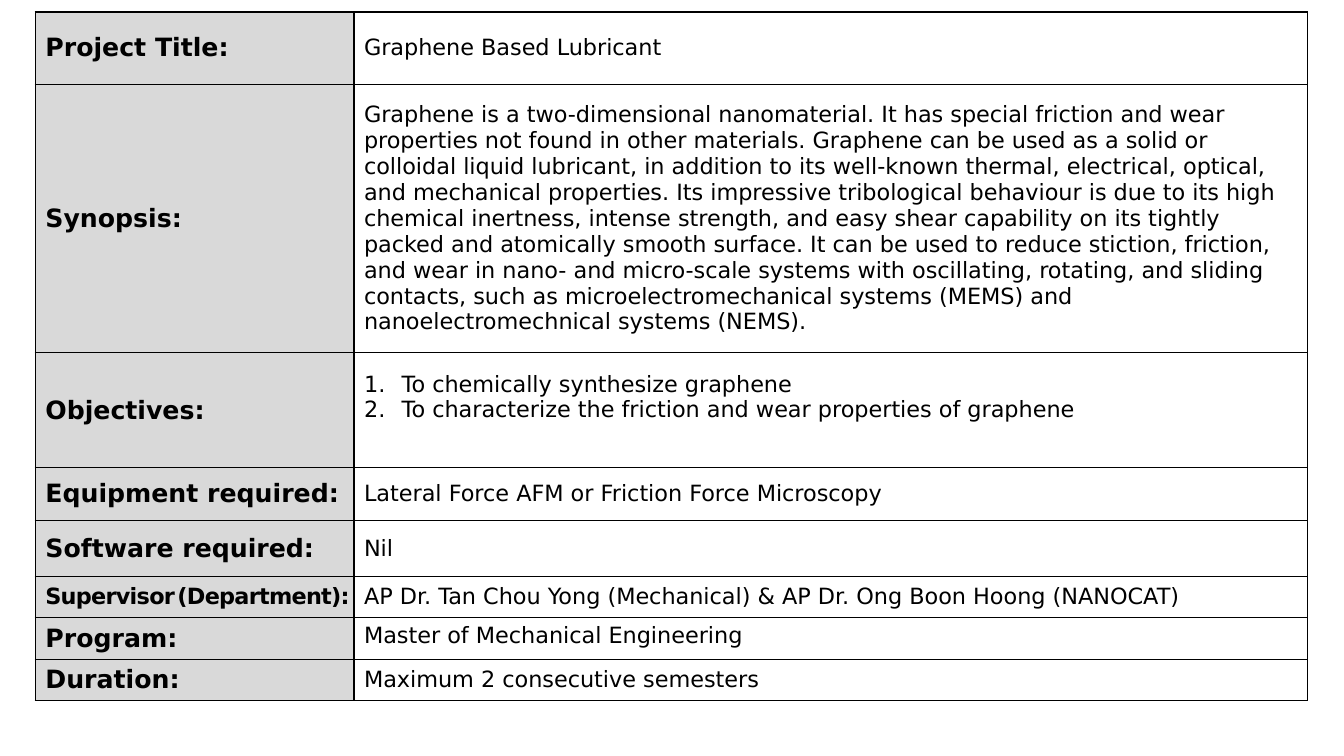
from dataclasses import dataclass

from lxml.etree import SubElement
from pptx import Presentation
from pptx.dml.color import RGBColor
from pptx.enum.text import MSO_ANCHOR as Anchor
from pptx.oxml.ns import qn
from pptx.util import Cm, Pt


@dataclass(frozen=True)
class Theme:
    font: str = "DejaVu Sans"
    ink: str = "000000"
    label_fill: str = "D9D9D9"
    label_size: int = 18
    body_size: int = 16
    gap_size: int = 5
    border: int = 1


THEME = Theme()
COLUMN_WIDTHS = (8.03, 24.03)
SYNOPSIS = (
    "Graphene is a two-dimensional nanomaterial. It has special friction and wear "
    "properties not found in other materials. Graphene can be used as a solid or "
    "colloidal liquid lubricant, in addition to its well-known thermal, electrical, "
    "optical, and mechanical properties. Its impressive tribological behaviour is due "
    "to its high chemical inertness, intense strength, and easy shear capability on "
    "its tightly packed and atomically smooth surface. It can be used to reduce "
    "stiction, friction, and wear in nano- and micro-scale systems with oscillating, "
    "rotating, and sliding contacts, such as microelectromechanical systems (MEMS) "
    "and nanoelectromechnical systems (NEMS)."
)
# Row height in cm, label, details
ROWS = (
    (1.83, "Project Title:", ["Graphene Based Lubricant"]),
    (6.76, "Synopsis:", [SYNOPSIS]),
    (2.9, "Objectives:", [
        "To chemically synthesize graphene",
        "To characterize the friction and wear properties of graphene",
    ]),
    (1.32, "Equipment required:", ["Lateral Force AFM or Friction Force Microscopy"]),
    (1.42, "Software required:", ["Nil"]),
    (1.04, "Supervisor (Department):", [
        "AP Dr. Tan Chou Yong (Mechanical) & AP Dr. Ong Boon Hoong (NANOCAT)",
    ]),
    (1.04, "Program:", ["Master of Mechanical Engineering"]),
    (1.04, "Duration:", ["Maximum 2 consecutive semesters"]),
)


def add_text(paragraph, text, *, size=THEME.body_size, bold=False, spacing=0):
    """Append a formatted run; spacing is the letter spacing in points."""
    run = paragraph.add_run()
    run.text = text
    run.font.name = THEME.font
    run.font.size = Pt(size)
    run.font.bold = bold
    run.font.color.rgb = RGBColor.from_string(THEME.ink)
    if spacing:
        run._r.get_or_add_rPr().set("spc", str(round(spacing * 100)))


def number_paragraph(paragraph, indent=Cm(0.95)):
    properties = paragraph._p.get_or_add_pPr()
    properties.set("marL", str(indent))
    properties.set("indent", str(-indent))
    SubElement(properties, qn("a:buFont"), typeface="+mj-lt")
    SubElement(properties, qn("a:buAutoNum"), type="arabicPeriod")


def draw_borders(cell):
    properties = cell._tc.get_or_add_tcPr()
    for side in ("a:lnL", "a:lnR", "a:lnT", "a:lnB"):
        line = SubElement(properties, qn(side), w=str(Pt(THEME.border)))
        SubElement(SubElement(line, qn("a:solidFill")), qn("a:srgbClr"), val=THEME.ink)


def format_cell(cell, fill=None):
    draw_borders(cell)
    cell.vertical_anchor = Anchor.MIDDLE
    if fill:
        cell.fill.solid()
        cell.fill.fore_color.rgb = RGBColor.from_string(fill)
    else:
        cell.fill.background()


def fill_label(cell, label):
    format_cell(cell, THEME.label_fill)
    paragraph = cell.text_frame.paragraphs[0]
    if label.startswith("Supervisor"):
        # Tightened so that the long label stays on one line
        cell.margin_right = 0
        role, unit = label.split(" ")
        for text, size in ((role, THEME.body_size), (" ", THEME.gap_size),
                           (unit, THEME.body_size)):
            add_text(paragraph, text, size=size, bold=True, spacing=-0.5)
    else:
        add_text(paragraph, label, size=THEME.label_size, bold=True)


def fill_details(cell, details):
    format_cell(cell)
    frame = cell.text_frame
    for index, text in enumerate(details):
        paragraph = frame.add_paragraph() if index else frame.paragraphs[0]
        if len(details) > 1:
            number_paragraph(paragraph)
        add_text(paragraph, text)


def add_project_table(slide):
    heights = [height for height, _, _ in ROWS]
    project = slide.shapes.add_table(
        len(ROWS), len(COLUMN_WIDTHS), Cm(0.89), Cm(0.3),
        Cm(sum(COLUMN_WIDTHS)), Cm(sum(heights))).table
    project.first_row = project.horz_banding = False
    for column, width in zip(project.columns, COLUMN_WIDTHS):
        column.width = Cm(width)
    for row, (height, label, details) in zip(project.rows, ROWS):
        row.height = Cm(height)
        label_cell, details_cell = row.cells
        fill_label(label_cell, label)
        fill_details(details_cell, details)
        if label == "Objectives:":
            details_cell.margin_bottom = Cm(0.79)
        elif label == "Program:":
            details_cell.vertical_anchor = Anchor.TOP


def main():
    deck = Presentation()
    deck.slide_width, deck.slide_height = Cm(33.87), Cm(19.05)
    add_project_table(deck.slides.add_slide(deck.slide_layouts[6]))
    deck.save("out.pptx")


if __name__ == "__main__":
    main()
